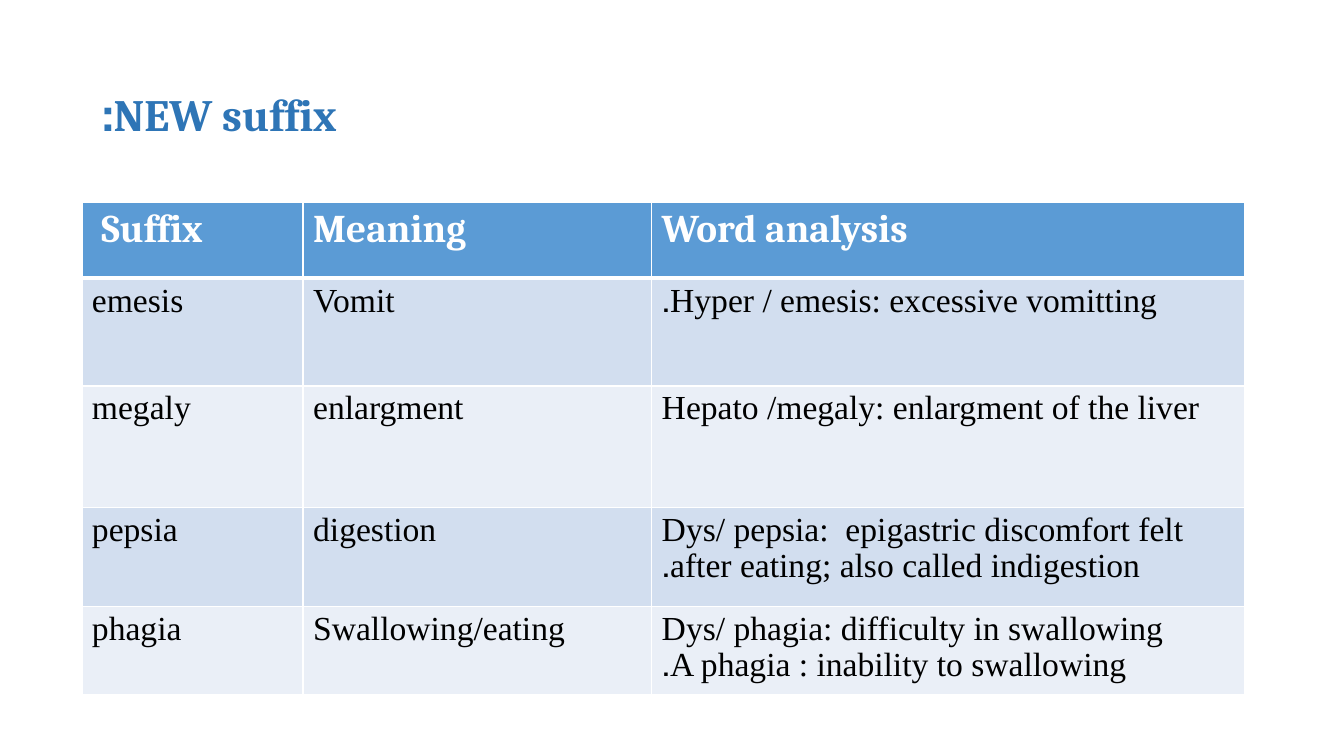
from pptx import Presentation
from pptx.dml.color import RGBColor
from pptx.enum.text import MSO_ANCHOR, PP_ALIGN
from pptx.oxml.ns import qn
from pptx.util import Pt
from lxml import etree

LEFT, MIDDLE, TOP = PP_ALIGN.LEFT, MSO_ANCHOR.MIDDLE, MSO_ANCHOR.TOP

# Content
TITLE = "NEW suffix:"
ROWS = [
    ("Suffix", "Meaning", "Word analysis"),
    ("emesis", "Vomit", "Hyper / emesis: excessive vomitting."),
    ("megaly", "enlargment", "Hepato /megaly: enlargment of the liver"),
    ("pepsia", "digestion",
     "Dys/ pepsia:  epigastric discomfort felt\nafter eating; also called indigestion."),
    ("phagia", "Swallowing/eating",
     "Dys/ phagia: difficulty in swallowing\nA phagia : inability to swallowing."),
]

# Theme: text styles are (font, size, colour, bold)
THEME = {
    "title": ("Cambria", 32, "2E75B6", True),
    "head": ("Cambria", 28, "FFFFFF", True),
    "body": ("Times New Roman", 24, "000000", False),
    "head_fill": "5B9BD5",
    "bands": ("D2DEEF", "EAEFF7"),
    "border": "FFFFFF",
}

# Layout in points
SLIDE = (960, 540)
TITLE_BOX = (66, 29, 711, 104)
TABLE_AT = (58.5, 144.25)
COL_WIDTHS = (158, 249, 423.5)
ROW_HEIGHTS = (54.5, 77, 87, 70.5, 60.5)
BODY_SPACING = 0.97
HEAD_INDENT = 14


def write(tf, text, style, spacing=None):
    """Fill a frame with left-aligned paragraphs that read right to left."""
    font, size, colour, bold = THEME[style]
    tf.text = text
    for p in tf.paragraphs:
        p.alignment = LEFT
        p._p.get_or_add_pPr().set("rtl", "1")
        if spacing:
            p.line_spacing = spacing
        for r in p.runs:
            r.font.name, r.font.size, r.font.bold = font, Pt(size), bold
            r.font.color.rgb = RGBColor.from_string(colour)


def add_borders(cell, widths):
    tc_pr = cell._tc.get_or_add_tcPr()
    for side, width in widths.items():
        ln = etree.SubElement(tc_pr, qn(f"a:ln{side}"), w=str(int(Pt(width))))
        fill = etree.SubElement(ln, qn("a:solidFill"))
        etree.SubElement(fill, qn("a:srgbClr"), val=THEME["border"])


prs = Presentation()
prs.slide_width, prs.slide_height = map(Pt, SLIDE)
s = prs.slides.add_slide(prs.slide_layouts[6])

# Title
tf = s.shapes.add_textbox(*map(Pt, TITLE_BOX)).text_frame
tf.word_wrap = True
tf.vertical_anchor = MIDDLE
write(tf, TITLE, "title")

# Table
size = (sum(COL_WIDTHS), sum(ROW_HEIGHTS))
table = s.shapes.add_table(len(ROWS), len(COL_WIDTHS), *map(Pt, TABLE_AT + size)).table
for col, width in zip(table.columns, COL_WIDTHS):
    col.width = Pt(width)
for row, height in zip(table.rows, ROW_HEIGHTS):
    row.height = Pt(height)

for i, texts in enumerate(ROWS):
    head = i == 0
    fill = THEME["head_fill"] if head else THEME["bands"][(i - 1) % 2]
    # The rule under the header is heavier than the others
    widths = {"L": 1, "R": 1, "T": 3 if i == 1 else 1, "B": 3 if head else 1}
    for j, text in enumerate(texts):
        cell = table.cell(i, j)
        add_borders(cell, widths)
        cell.fill.solid()
        cell.fill.fore_color.rgb = RGBColor.from_string(fill)
        cell.vertical_anchor = TOP
        write(cell.text_frame, text, "head" if head else "body",
              None if head else BODY_SPACING)
table.cell(0, 0).margin_left = Pt(HEAD_INDENT)

prs.save("out.pptx")
